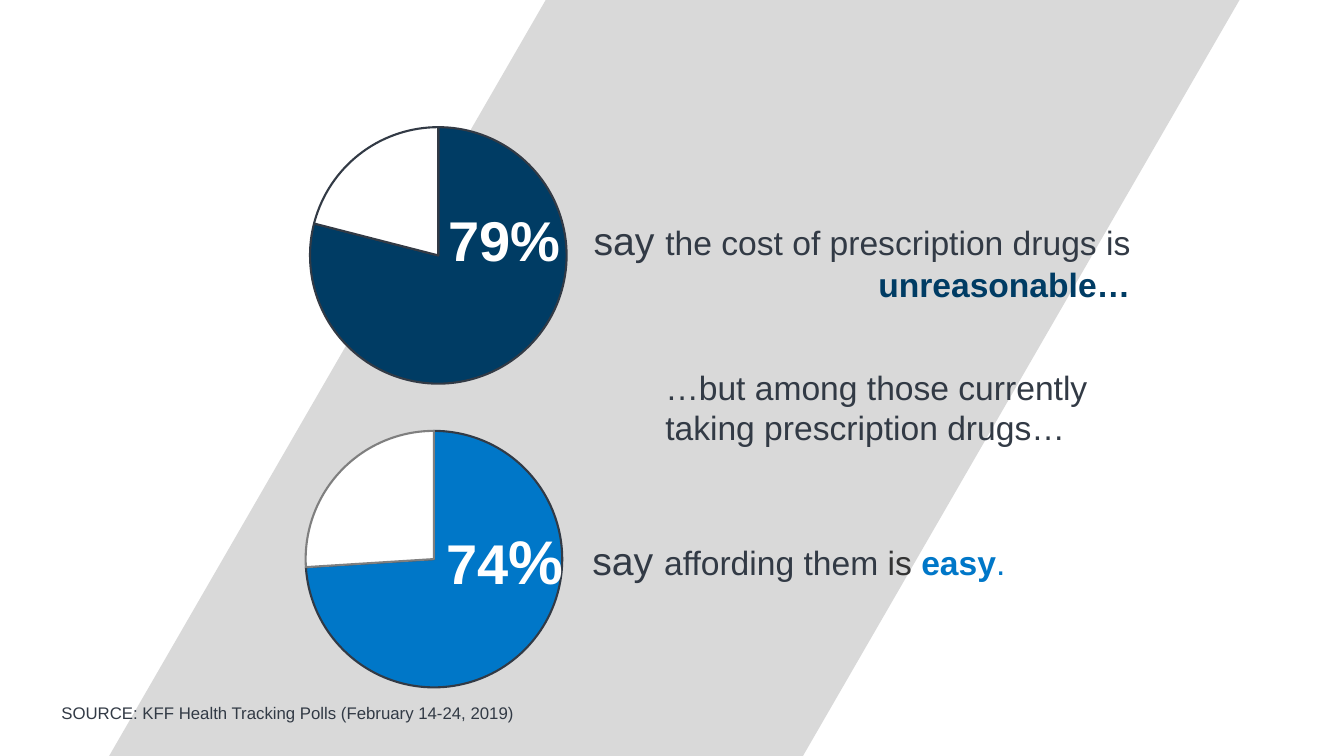
from lxml import etree
from pptx import Presentation
from pptx.chart.data import CategoryChartData
from pptx.dml.color import RGBColor
from pptx.enum.chart import XL_CHART_TYPE as ChartType
from pptx.enum.shapes import MSO_SHAPE as Shape
from pptx.enum.text import MSO_ANCHOR as Anchor, PP_ALIGN as Align
from pptx.oxml import parse_xml
from pptx.oxml.ns import nsdecls, qn
from pptx.util import Inches, Pt

FONT = "Arial"
INK = RGBColor(0x32, 0x3A, 0x45)
CHARCOAL = RGBColor(0x33, 0x33, 0x33)
NAVY = RGBColor(0x00, 0x3C, 0x64)
BLUE = RGBColor(0x00, 0x77, 0xC8)
WHITE = RGBColor(0xFF, 0xFF, 0xFF)
BAND_GRAY = RGBColor(0xD9, 0xD9, 0xD9)
LINE_GRAY = RGBColor(0x7F, 0x7F, 0x7F)

PIE_LEFT, PIE_WIDTH, PIE_HEIGHT = 2.17, 4.33, 3.51
PLOT_WIDTH, PLOT_HEIGHT = 0.588, 0.893

PIES = [
    {"top": 0.95, "values": (79, 21, None, None), "plot": (0.209, 0.005),
     "fills": (NAVY, WHITE), "lines": (INK, INK)},
    {"top": 3.77, "values": (74, 26, None, None), "plot": (0.199, 0.06),
     "fills": (BLUE, WHITE), "lines": (INK, LINE_GRAY)},
]

TEXTS = [
    ((4, 1.99, 2.01, 0.77), Align.CENTER, Anchor.TOP,
     [("79%", 40, WHITE, True)]),
    ((4, 5.14, 2.01, 0.84), Align.CENTER, Anchor.TOP,
     [("74", 40, WHITE, True), ("%", 44, WHITE, True)]),
    ((5.56, 2.1, 5.75, 0.98), Align.RIGHT, Anchor.TOP,
     [("say ", 28, INK, False),
      ("the cost of prescription drugs is ", 24, INK, False),
      ("unreasonable…", 24, NAVY, True)]),
    ((6.5, 3.59, 5.17, 0.91), Align.LEFT, Anchor.TOP,
     [("…but among those currently taking prescription drugs…", 24, INK, False)]),
    ((4.32, 5.27, 5.75, 0.57), Align.RIGHT, Anchor.TOP,
     [("say ", 28, INK, False), ("affording them ", 24, INK, False),
      ("is ", 24, CHARCOAL, False), ("easy", 24, BLUE, True),
      (".", 24, BLUE, False)]),
    ((0.51, 6.62, 8.98, 0.6), Align.LEFT, Anchor.BOTTOM,
     [("SOURCE: KFF Health Tracking Polls (February 14-24, 2019)", 12, INK, False)]),
]


def add_band(slide):
    band = slide.shapes.add_shape(
        Shape.PARALLELOGRAM, *map(Inches, (-1.77, 0.62, 17.09, 5.96)))
    band.adjustments[0] = 0.105
    band.rotation = 300
    band.shadow.inherit = False
    band.fill.solid()
    band.fill.fore_color.rgb = BAND_GRAY
    band.line.fill.background()


def place_plot(chart, x, y):
    plot_area = chart._chartSpace.chart.plotArea
    for old_layout in plot_area.findall(qn("c:layout")):
        plot_area.remove(old_layout)
    layout = parse_xml(f"<c:layout {nsdecls('c')}/>")
    manual = etree.SubElement(layout, qn("c:manualLayout"))
    settings = [("layoutTarget", "inner"), ("xMode", "edge"), ("yMode", "edge"),
                ("x", x), ("y", y), ("w", PLOT_WIDTH), ("h", PLOT_HEIGHT)]
    for name, value in settings:
        etree.SubElement(manual, qn(f"c:{name}")).set("val", str(value))
    plot_area.insert(0, layout)


def clear_background(chart):
    chart._chartSpace.chart.addnext(parse_xml(
        f"<c:spPr {nsdecls('c', 'a')}><a:noFill/><a:ln><a:noFill/></a:ln></c:spPr>"))


def add_pie(slide, pie):
    data = CategoryChartData()
    data.categories = ["1", "2", "3", "4"]
    data.add_series("Series 1", pie["values"])
    box = map(Inches, (PIE_LEFT, pie["top"], PIE_WIDTH, PIE_HEIGHT))
    chart = slide.shapes.add_chart(ChartType.PIE, *box, data).chart
    chart.has_title = False
    chart.has_legend = False
    chart.font.name = FONT
    chart.font.size = Pt(10)
    chart.font.color.rgb = CHARCOAL
    plot = chart.plots[0]
    plot.vary_by_categories = True
    for index, (fill, line) in enumerate(zip(pie["fills"], pie["lines"])):
        slice_format = plot.series[0].points[index].format
        slice_format.fill.solid()
        slice_format.fill.fore_color.rgb = fill
        slice_format.line.color.rgb = line
        slice_format.line.width = Pt(1.5)
    place_plot(chart, *pie["plot"])
    clear_background(chart)


def add_text(slide, box, alignment, anchor, runs):
    frame = slide.shapes.add_textbox(*map(Inches, box)).text_frame
    frame.word_wrap = True
    frame.vertical_anchor = anchor
    paragraph = frame.paragraphs[0]
    paragraph.alignment = alignment
    for text, size, color, bold in runs:
        run = paragraph.add_run()
        run.text = text
        run.font.name = FONT
        run.font.size = Pt(size)
        run.font.bold = bold
        run.font.color.rgb = color


def main():
    presentation = Presentation()
    presentation.slide_width = Inches(13.33)
    presentation.slide_height = Inches(7.5)
    slide = presentation.slides.add_slide(presentation.slide_layouts[6])
    add_band(slide)
    for pie in PIES:
        add_pie(slide, pie)
    for text in TEXTS:
        add_text(slide, *text)
    presentation.save("out.pptx")


if __name__ == "__main__":
    main()
